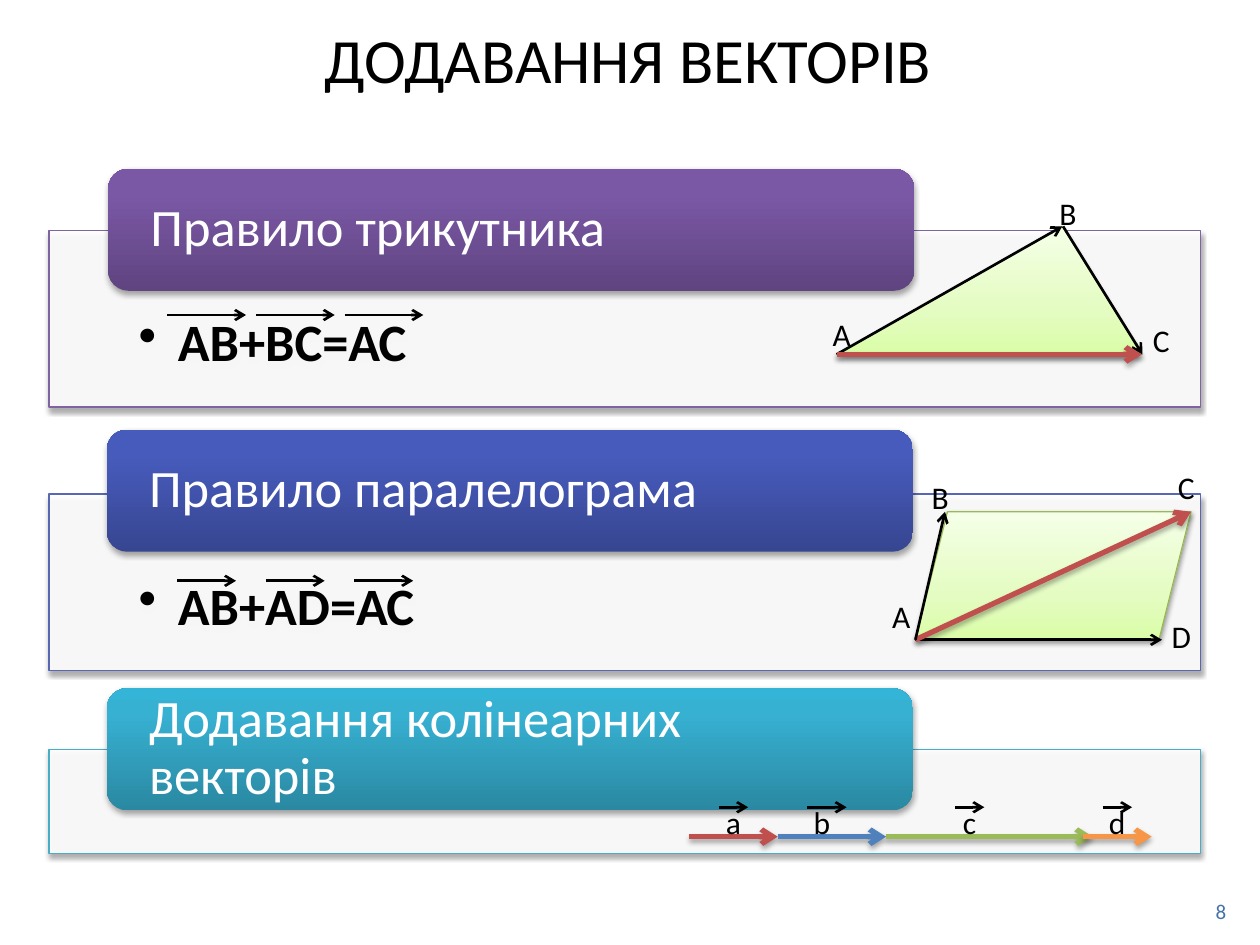
from typing import NamedTuple

from lxml import etree
from pptx import Presentation
from pptx import util as u
from pptx.dml.color import RGBColor
from pptx.enum import shapes, text
from pptx.oxml import ns

Pt = u.Pt
FONT = "Calibri"
BLACK = RGBColor(0, 0, 0)
WHITE = RGBColor(0xFF, 0xFF, 0xFF)
RED = RGBColor(0xC0, 0x50, 0x4D)
BLUE = RGBColor(0x4F, 0x81, 0xBD)
GREEN = RGBColor(0x9B, 0xBB, 0x59)
ORANGE = RGBColor(0xF7, 0x96, 0x46)
PURPLE_EDGE = RGBColor(0x80, 0x64, 0xA2)
INDIGO_EDGE = RGBColor(0x57, 0x67, 0xB4)
TEAL_EDGE = RGBColor(0x4B, 0xAC, 0xC6)
FIGURE_EDGE = RGBColor(0x98, 0xB9, 0x55)
NUMBER_COLOR = RGBColor(0x46, 0x72, 0xA7)

Stops = tuple[tuple[int, RGBColor], ...]


def blend(dark: str, middle: str, light: str, position: int) -> Stops:
    return ((0, RGBColor.from_string(dark)), (position, RGBColor.from_string(middle)),
            (100, RGBColor.from_string(light)))


PURPLE_BLEND = blend("5F4480", "7B58A6", "7C57A8", 80)
INDIGO_BLEND = blend("374691", "475BBC", "455ABF", 80)
TEAL_BLEND = blend("2A88A2", "37B1D2", "34B4D6", 80)
FIGURE_BLEND = blend("DAFDA7", "E4FCC2", "F5FFE7", 35)


class Section(NamedTuple):
    heading: str
    heading_left: float
    heading_top: float
    panel_top: float
    panel_height: float
    edge: RGBColor
    stops: Stops
    formula: str = ""


class Figure(NamedTuple):
    kind: shapes.MSO_SHAPE
    left: float
    top: float
    width: float
    adjustment: float


class Arrow(NamedTuple):
    x1: float
    y1: float
    x2: float
    y2: float
    color: RGBColor = BLACK
    bold: bool = False


class Letter(NamedTuple):
    label: str
    center_x: float
    center_y: float


SECTIONS = (
    Section("Правило трикутника", 61.8, 96.4, 131.9, 100.8,
            PURPLE_EDGE, PURPLE_BLEND, "АВ+ВС=АС"),
    Section("Правило паралелограма", 61, 245.5, 282.4, 100.8,
            INDIGO_EDGE, INDIGO_BLEND, "АВ+АD=АС"),
    Section("Додавання колінеарних векторів", 61, 393.3, 428.4, 59.5,
            TEAL_EDGE, TEAL_BLEND),
)
FIGURE_HEIGHT = 73.2
FIGURES = (
    Figure(shapes.MSO_SHAPE.ISOSCELES_TRIANGLE, 478.1, 129.4, 174.4, 0.74),
    Figure(shapes.MSO_SHAPE.PARALLELOGRAM, 523.1, 292.5, 157.5, 0.25),
)
FIGURE_ARROWS = (
    Arrow(478.1, 202.5, 607, 129.4),
    Arrow(607.5, 129.4, 652.8, 202.5),
    Arrow(478.1, 202.5, 652.5, 202.5, RED, True),
    Arrow(523.1, 365.6, 664, 365.6),
    Arrow(523.1, 365.6, 680.6, 292.5, RED, True),
    Arrow(523.1, 365.6, 540, 292.5),
)
COLLINEAR_Y = 478.1
COLLINEAR_ARROWS = tuple(
    Arrow(start, COLLINEAR_Y, end, COLLINEAR_Y, color, True)
    for start, end, color in (
        (393.8, 444.4, RED), (444.4, 506.3, BLUE),
        (506.3, 624.4, GREEN), (618.8, 658.1, ORANGE))
)
# Arrows above vector names: y, length, starting points
OVERLINES = (
    (180, 45, (95.6, 146.3, 196.9)),
    (331.9, 33.6, (101.3, 151.9, 202.5)),
    (461.3, 16.9, (410.6, 545.6, 630)),
    (461.3, 22.5, (461.3,)),
)
LETTERS = (
    Letter("А", 481, 191), Letter("В", 610.3, 121.5), Letter("С", 663.6, 194.1),
    Letter("А", 515, 351.7), Letter("В", 537.2, 284.1), Letter("С", 677.9, 278.4),
    Letter("D", 675, 363.3),
    Letter("а", 419.1, 469.7), Letter("b", 469.7, 469.7),
    Letter("с", 554.1, 469.7), Letter("d", 638.4, 469.7),
)


def add_child(parent, tag: str, **attributes):
    element = etree.SubElement(parent, ns.qn(tag))
    for name, value in attributes.items():
        element.set(name, str(value))
    return element


def add_shadow(effects, alpha: int = 35, distance: float = 1.8) -> None:
    shadow = add_child(effects, "a:outerShdw", blurRad=int(Pt(3.1)), dist=int(Pt(distance)),
                       dir=90 * 60000, algn="ctr", rotWithShape=0)
    color = add_child(shadow, "a:srgbClr", val="000000")
    add_child(color, "a:alpha", val=alpha * 1000)


def add_shape(slide, kind, left: float, top: float, width: float, height: float,
              edge: RGBColor | None, alpha: int = 35, distance: float = 1.8):
    """Add a preset shape with a soft drop shadow and an optional outline."""
    shape = slide.shapes.add_shape(kind, Pt(left), Pt(top), Pt(width), Pt(height))
    if edge is None:
        shape.line.fill.background()
    else:
        shape.line.color.rgb = edge
        shape.line.width = Pt(0.75)
    shape.shadow.inherit = False
    add_shadow(shape._element.spPr.find(ns.qn("a:effectLst")), alpha, distance)
    return shape


def fill_gradient(shape, stops: Stops) -> None:
    """Fill from the bottom edge up with the given stops."""
    shape.fill.gradient()
    shape.fill.gradient_angle = 90
    stop_list = next(shape._element.spPr.iter(ns.qn("a:gsLst")))
    for stop in list(stop_list):
        stop_list.remove(stop)
    for position, color in stops:
        stop = add_child(stop_list, "a:gs", pos=position * 1000)
        add_child(stop, "a:srgbClr", val=color)


def write(shape, words: str, size: float, color: RGBColor, align, anchor,
          insets: tuple[float, float, float, float] = (7.2, 3.6, 7.2, 3.6),
          bold: bool = False, bullet: bool = False) -> None:
    frame = shape.text_frame
    frame.word_wrap = True
    frame.vertical_anchor = anchor
    frame.margin_left, frame.margin_top, frame.margin_right, frame.margin_bottom = map(Pt, insets)
    paragraph = frame.paragraphs[0]
    paragraph.alignment = align
    if bullet:
        properties = paragraph._p.get_or_add_pPr()
        properties.set("marL", str(int(Pt(22.5))))
        properties.set("indent", str(-int(Pt(22.5))))
        add_child(properties, "a:buChar", char="•")
    run = paragraph.add_run()
    run.text = words
    run.font.name = FONT
    run.font.size = Pt(size)
    run.font.bold = bold
    run.font.color.rgb = color


def add_text(slide, words: str, left: float, top: float, width: float, height: float,
             size: float, color: RGBColor = BLACK, align=text.PP_ALIGN.CENTER,
             anchor=text.MSO_ANCHOR.MIDDLE) -> None:
    box = slide.shapes.add_textbox(Pt(left), Pt(top), Pt(width), Pt(height))
    write(box, words, size, color, align, anchor)


def add_section(slide, section: Section) -> None:
    panel = add_shape(slide, shapes.MSO_SHAPE.RECTANGLE, 28.1, section.panel_top,
                      658.1, section.panel_height, section.edge)
    panel.fill.solid()
    panel.fill.fore_color.rgb = WHITE
    add_child(next(panel._element.spPr.iter(ns.qn("a:srgbClr"))), "a:alpha", val=90000)
    if section.formula:
        write(panel, section.formula, 30, BLACK, text.PP_ALIGN.LEFT, text.MSO_ANCHOR.TOP,
              (51.1, 49, 51.1, 16.6), bold=True, bullet=True)
        panel.text_frame.paragraphs[0].line_spacing = 0.9
    heading = add_shape(slide, shapes.MSO_SHAPE.ROUNDED_RECTANGLE, section.heading_left,
                        section.heading_top, 460.7, 69.8, None)
    fill_gradient(heading, section.stops)
    write(heading, section.heading, 30, WHITE, text.PP_ALIGN.LEFT, text.MSO_ANCHOR.MIDDLE,
          (20.8, 0, 17, 0))
    heading.text_frame.paragraphs[0].line_spacing = 0.9


def add_arrow(slide, arrow: Arrow) -> None:
    connector = slide.shapes.add_connector(shapes.MSO_CONNECTOR.STRAIGHT, Pt(arrow.x1),
                                           Pt(arrow.y1), Pt(arrow.x2), Pt(arrow.y2))
    connector.line.color.rgb = arrow.color
    connector.line.width = Pt(3 if arrow.bold else 1.5)
    add_child(connector.line._get_or_add_ln(), "a:tailEnd", type="arrow")
    effects = add_child(connector._element.spPr, "a:effectLst")
    if arrow.bold:
        add_shadow(effects)


def main() -> None:
    presentation = Presentation()
    presentation.slide_width, presentation.slide_height = Pt(720), Pt(540)
    slide = presentation.slides.add_slide(presentation.slide_layouts[6])
    for section in SECTIONS:
        add_section(slide, section)
    add_text(slide, "ДОДАВАННЯ ВЕКТОРІВ", 16.9, 0, 684, 66.4, 36)
    for figure in FIGURES:
        shape = add_shape(slide, figure.kind, figure.left, figure.top, figure.width,
                          FIGURE_HEIGHT, FIGURE_EDGE, 38, 1.6)
        shape.adjustments[0] = figure.adjustment
        fill_gradient(shape, FIGURE_BLEND)
    for arrow in FIGURE_ARROWS + COLLINEAR_ARROWS:
        add_arrow(slide, arrow)
    for y, length, starts in OVERLINES:
        for start in starts:
            add_arrow(slide, Arrow(start, y, start + length, y))
    for letter in LETTERS:
        add_text(slide, letter.label, letter.center_x - 19.7, letter.center_y - 19.7,
                 39.4, 39.4, 18)
    add_text(slide, "8", 648, 509.8, 59.8, 19.4, 12, NUMBER_COLOR,
             text.PP_ALIGN.RIGHT, text.MSO_ANCHOR.TOP)
    presentation.save("out.pptx")


if __name__ == "__main__":
    main()
